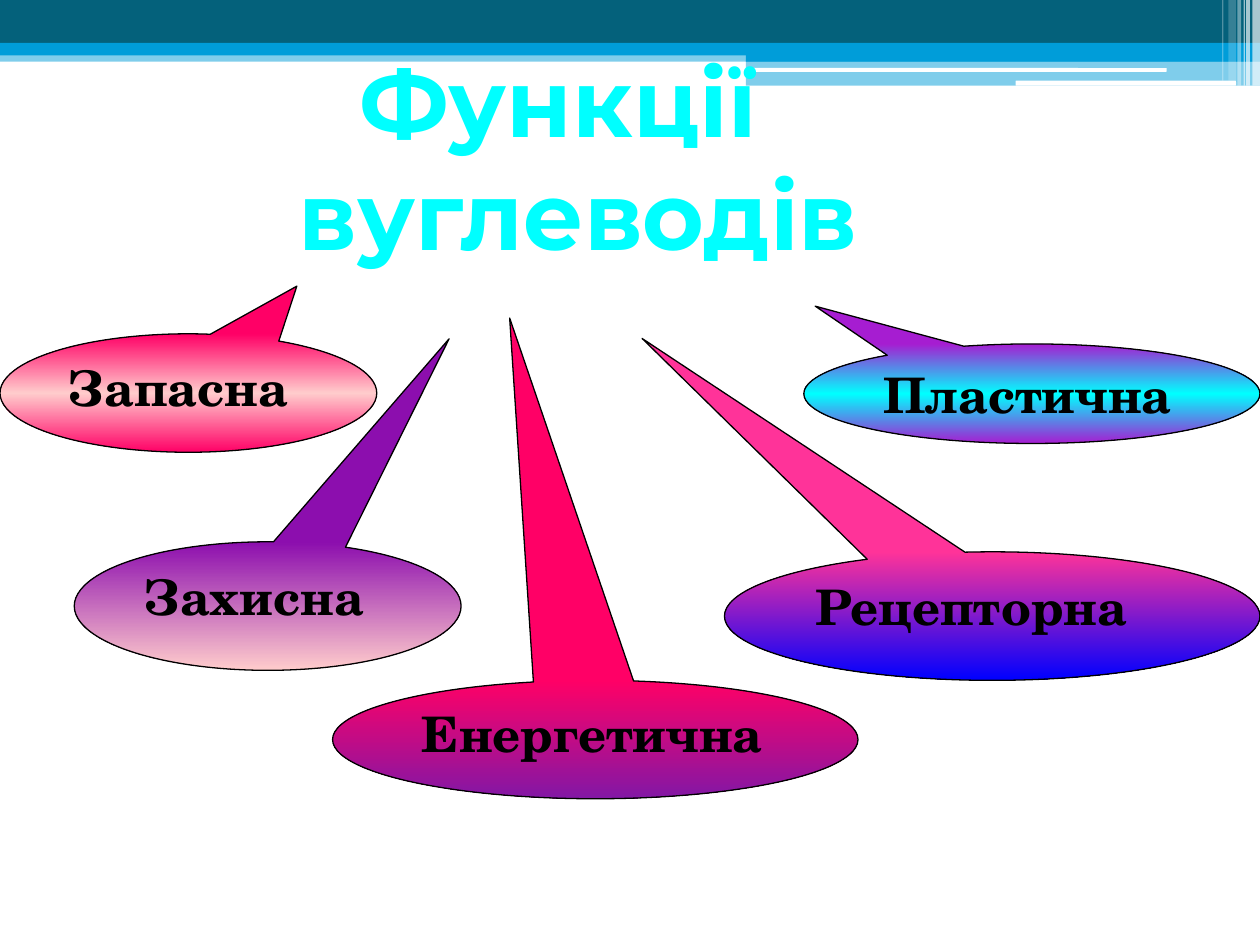
from lxml.etree import SubElement
from pptx import Presentation
from pptx.dml.color import RGBColor
from pptx.enum.shapes import MSO_SHAPE
from pptx.enum.text import MSO_ANCHOR, MSO_AUTO_SIZE, PP_ALIGN
from pptx.oxml import parse_xml
from pptx.oxml.ns import nsdecls, qn
from pptx.util import Inches, Pt

COLORS = {
    "teal": "04617B", "blue": "009DD9", "white": "FFFFFF", "black": "000000",
    "cyan": "00FFFF", "violet": "A61DD1", "red": "FF0066", "blush": "FFCCCC",
    "pink": "FF3399", "deep blue": "0000FF", "purple": "8C0EAE", "plum": "8317A5",
}


def add_shape(kind, left, top, width, height):
    shape = slide.shapes.add_shape(
        kind, Inches(left), Inches(top), Inches(width), Inches(height))
    shape.shadow.inherit = False
    return shape


def format_runs(paragraph, font_name, size, color):
    for run in paragraph.runs:
        run.font.name = font_name
        run.font.size = Pt(size)
        run.font.bold = True
        run.font.color.rgb = RGBColor.from_string(COLORS[color])


presentation = Presentation()
presentation.slide_width = Inches(10)
presentation.slide_height = Inches(7.5)
slide = presentation.slides.add_slide(presentation.slide_layouts[5])

bands = [
    (MSO_SHAPE.RECTANGLE, 0, 0.4, 10, 0.09, "blue", 50),
    (MSO_SHAPE.RECTANGLE, 0, 0, 10, 0.34, "teal", 100),
    (MSO_SHAPE.RECTANGLE, 0, 0.34, 10, 0.1, "blue", 100),
    (MSO_SHAPE.RECTANGLE, 5.92, 0.39, 4.08, 0.1, "blue", 100),
    (MSO_SHAPE.RECTANGLE, 5.92, 0.48, 4.08, 0.2, "blue", 50),
    (MSO_SHAPE.ROUNDED_RECTANGLE, 5.91, 0.54, 3.35, 0.03, "white", 100),
    (MSO_SHAPE.ROUNDED_RECTANGLE, 8.06, 0.64, 1.75, 0.04, "white", 100),
]
stripes = [
    (9.94, 0.06, 0.68, 65), (9.89, 0.03, 0.68, 65), (9.87, 0.01, 0.68, 60),
    (9.82, 0.03, 0.68, 40), (9.75, 0.06, 0.64, 20), (9.7, 0.01, 0.64, 30),
]
bands += [(MSO_SHAPE.RECTANGLE, left, 0, width, height, "white", opacity)
          for left, width, height, opacity in stripes]
for kind, left, top, width, height, color, opacity in bands:
    band = add_shape(kind, left, top, width, height)
    band.fill.solid()
    band.fill.fore_color.rgb = RGBColor.from_string(COLORS[color])
    band.line.fill.background()
    if opacity < 100:
        color_element = band._element.spPr.find(qn("a:solidFill"))[0]
        SubElement(color_element, qn("a:alpha"), val=str(opacity * 1000))

title = slide.shapes.title
title.left, title.top = Inches(1.3), Inches(0.29)
title.width, title.height = Inches(7.48), Inches(1.92)
title.text_frame.text = "Функції\vвуглеводів"
title.text_frame.auto_size = MSO_AUTO_SIZE.NONE
title.text_frame.vertical_anchor = MSO_ANCHOR.TOP
paragraph = title.text_frame.paragraphs[0]
paragraph.alignment = PP_ALIGN.LEFT
paragraph_properties = paragraph._p.get_or_add_pPr()
paragraph_properties.set("marL", str(Inches(0.97)))
paragraph_properties.set("indent", str(Inches(0.48)))
format_runs(paragraph, "Montserrat", 54, "cyan")
slide.shapes._spTree.append(title._element)

callouts = [
    ("Пластична", 6.38, 2.73, 3.62, 0.79, (-0.475, -0.88), ("violet", "cyan", "violet")),
    ("Запасна", 0, 2.65, 2.99, 0.94, (0.288, -0.903), ("red", "blush", "red")),
    ("Рецепторна", 5.75, 4.38, 4.25, 1.02, (-0.654, -2.161), ("pink", "deep blue")),
    ("Захисна", 0.59, 4.3, 3.07, 1.02, (0.469, -2.08), ("purple", "blush")),
    ("Енергетична", 2.64, 5.4, 4.17, 0.94, (-0.163, -3.559), ("red", "plum")),
]
for text, left, top, width, height, tip, gradient in callouts:
    callout = add_shape(MSO_SHAPE.OVAL_CALLOUT, left, top, width, height)
    callout.adjustments[0], callout.adjustments[1] = tip
    stops = "".join(
        f'<a:gs pos="{100000 * index // (len(gradient) - 1)}">'
        f'<a:srgbClr val="{COLORS[color]}"/></a:gs>'
        for index, color in enumerate(gradient))
    callout._element.spPr.find(qn("a:prstGeom")).addnext(parse_xml(
        f'<a:gradFill {nsdecls("a")} rotWithShape="1"><a:gsLst>{stops}</a:gsLst>'
        '<a:lin ang="5400000" scaled="1"/></a:gradFill>'))
    callout.line.color.rgb = RGBColor.from_string(COLORS["black"])
    callout.line.width = Pt(0.75)
    callout.text_frame.text = text
    callout.text_frame.vertical_anchor = MSO_ANCHOR.TOP
    paragraph = callout.text_frame.paragraphs[0]
    paragraph.alignment = PP_ALIGN.LEFT
    format_runs(paragraph, "TeX Gyre Schola", 28, "black")

presentation.save("out.pptx")
